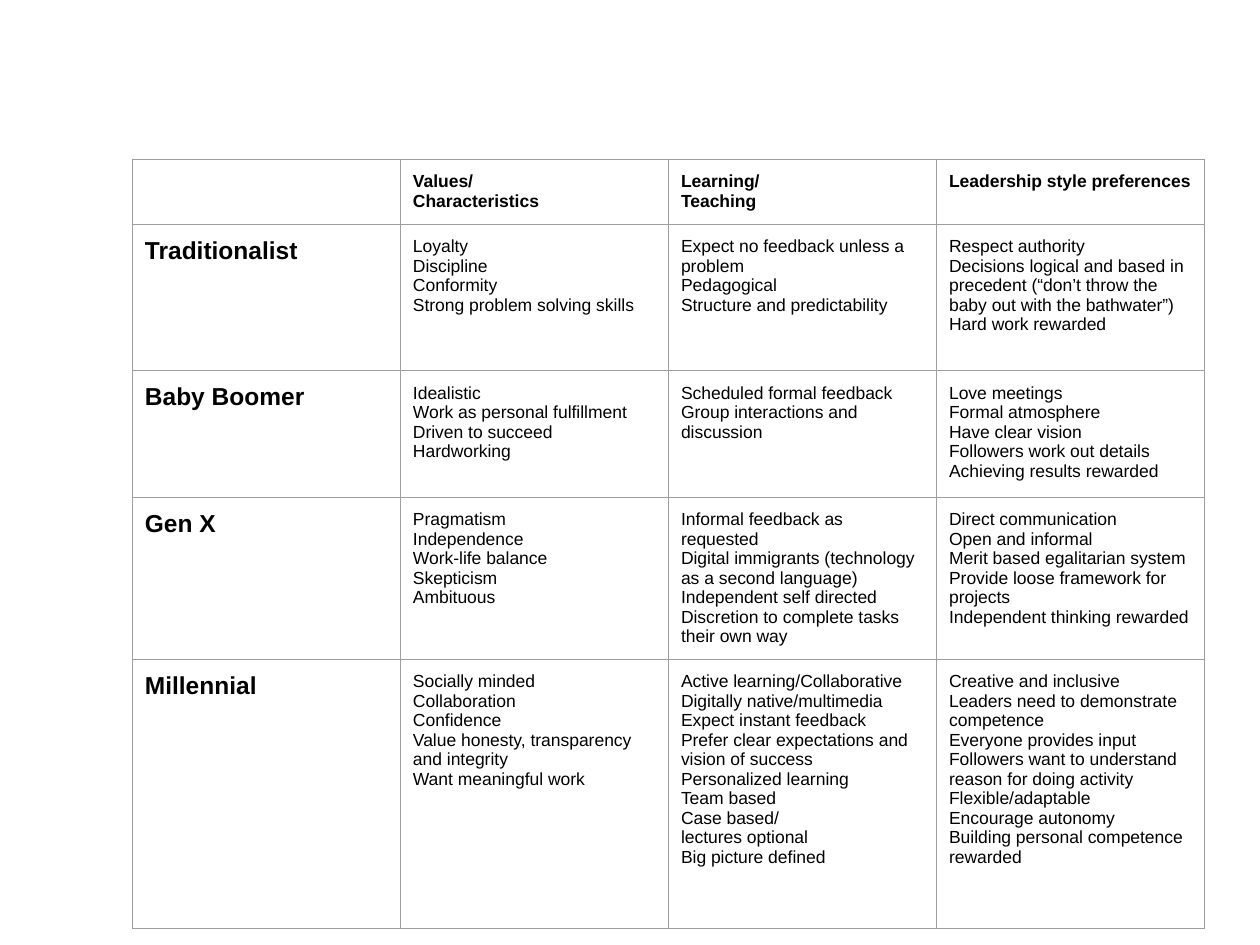
from dataclasses import dataclass

from lxml.etree import SubElement
from pptx import Presentation
from pptx.dml.color import RGBColor
from pptx.oxml.ns import qn
from pptx.util import Pt


@dataclass(frozen=True)
class Theme:
    font: str = "Arial"
    text: RGBColor = RGBColor(0, 0, 0)
    border: str = "9E9E9E"
    border_width: int = Pt(0.75)
    body: int = Pt(10)
    generation: int = Pt(14)
    inset: int = Pt(7.2)


THEME = Theme()

# One entry per cell; each line of an entry is a paragraph, \v breaks a line.
ROWS = [
    ["", "Values/\nCharacteristics", "Learning/\nTeaching",
     "Leadership style preferences"],
    ["Traditionalist",
     "Loyalty\nDiscipline\nConformity\nStrong problem solving skills",
     "Expect no feedback unless a problem\nPedagogical\n"
     "Structure and predictability",
     "Respect authority\n"
     "Decisions logical and based in precedent "
     "(“don’t throw the baby out with the bathwater”)\n"
     "Hard work rewarded"],
    ["Baby Boomer",
     "Idealistic\nWork as personal fulfillment\nDriven to succeed\nHardworking",
     "Scheduled formal feedback\nGroup interactions and discussion",
     "Love meetings\nFormal atmosphere\nHave clear vision\n"
     "Followers work out details\nAchieving results rewarded"],
    ["Gen X",
     "Pragmatism\nIndependence\nWork-life balance\nSkepticism\nAmbituous",
     "Informal feedback as requested\n"
     "Digital immigrants (technology as a second language)\n"
     "Independent self directed\n"
     "Discretion to complete tasks their own way",
     "Direct communication\nOpen and informal\n"
     "Merit based egalitarian system\n"
     "Provide loose framework for projects\n"
     "Independent thinking rewarded"],
    ["Millennial",
     "Socially minded\nCollaboration\nConfidence\n"
     "Value honesty, transparency and integrity\nWant meaningful work",
     "Active learning/Collaborative\nDigitally native/multimedia\n"
     "Expect instant feedback\n"
     "Prefer clear expectations and vision of success\n"
     "Personalized learning\nTeam based\n"
     "Case based/\vlectures optional\nBig picture defined",
     "Creative and inclusive\nLeaders need to demonstrate competence\n"
     "Everyone provides input\n"
     "Followers want to understand reason for doing activity\n"
     "Flexible/adaptable\nEncourage autonomy\n"
     "Building personal competence rewarded"],
]
ROW_HEIGHTS = [Pt(h) for h in (37.2, 83.8, 72.2, 83.5, 154)]


def set_borders(cell):
    tc_pr = cell._tc.get_or_add_tcPr()
    for side in ("a:lnL", "a:lnR", "a:lnT", "a:lnB"):
        ln = SubElement(tc_pr, qn(side), w=str(THEME.border_width))
        fill = SubElement(ln, qn("a:solidFill"))
        SubElement(fill, qn("a:srgbClr"), val=THEME.border)


def fill_cell(cell, text, size, bold):
    set_borders(cell)
    cell.fill.background()
    cell.margin_left = cell.margin_right = THEME.inset
    cell.margin_top = cell.margin_bottom = THEME.inset
    tf = cell.text_frame
    tf.text = text
    for p in tf.paragraphs:
        p.font.name = THEME.font
        p.font.size = size
        p.font.bold = bold
        p.font.color.rgb = THEME.text


def add_generation_table(slide, left, top, width):
    """Compare the generations, one per row, under a header row."""
    table = slide.shapes.add_table(
        len(ROWS), len(ROWS[0]), left, top, width, sum(ROW_HEIGHTS)).table
    table.first_row = table.horz_banding = False
    for row, height in zip(table.rows, ROW_HEIGHTS):
        row.height = height
    for i, texts in enumerate(ROWS):
        for j, text in enumerate(texts):
            size = THEME.generation if i and j == 0 else THEME.body
            fill_cell(table.cell(i, j), text, size, bold=i == 0 or j == 0)


def main():
    prs = Presentation()
    prs.slide_width, prs.slide_height = Pt(720), Pt(540)
    slide = prs.slides.add_slide(prs.slide_layouts[6])
    add_generation_table(slide, Pt(75.6), Pt(90.9), Pt(612.8))
    prs.save("out.pptx")


if __name__ == "__main__":
    main()
